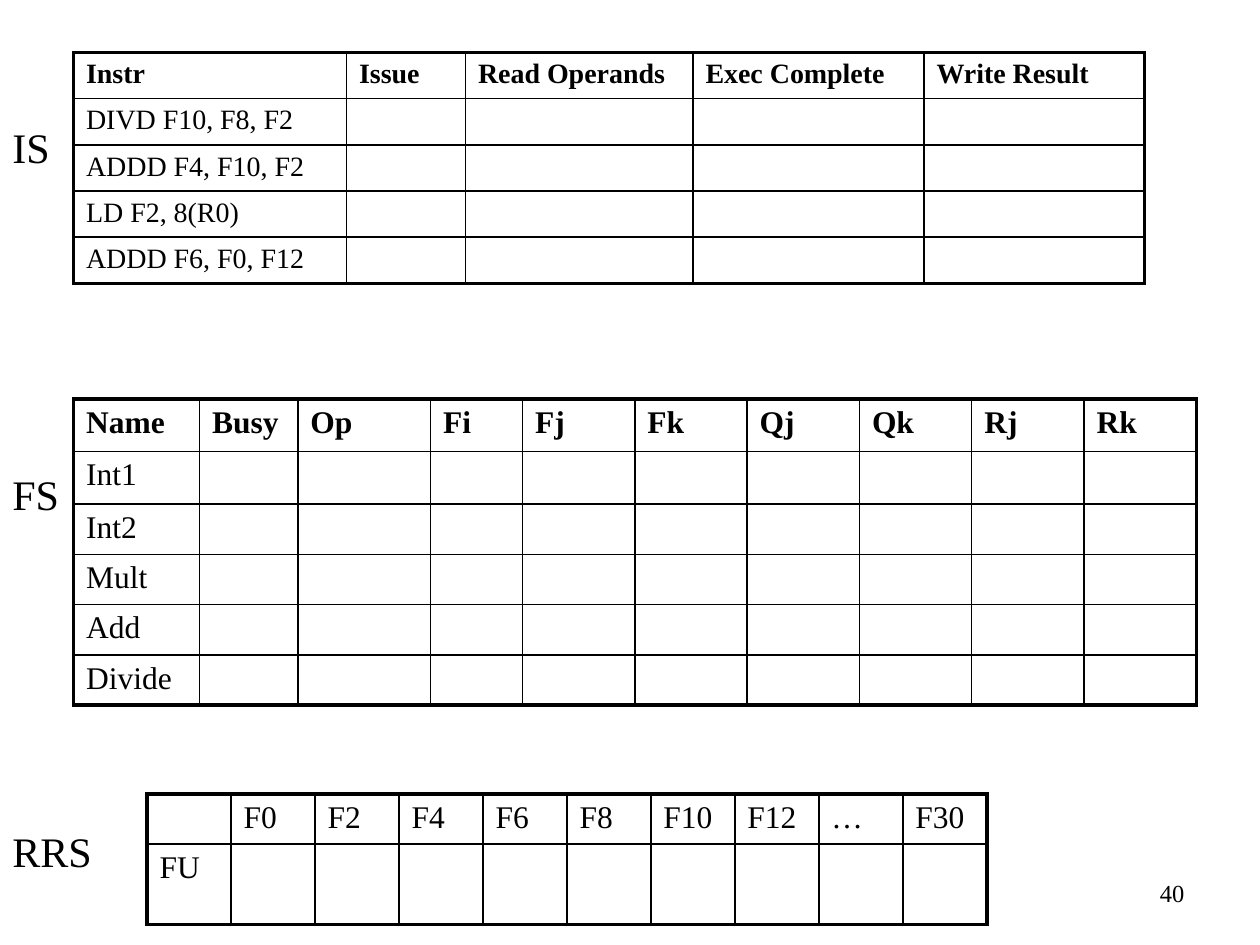
from lxml import etree
from pptx import Presentation
from pptx.dml.color import RGBColor
from pptx.enum.text import MSO_AUTO_SIZE, PP_ALIGN
from pptx.oxml.ns import qn
from pptx.util import Pt

LEFT, RIGHT = PP_ALIGN.LEFT, PP_ALIGN.RIGHT
FIT_SHAPE, NO_FIT = MSO_AUTO_SIZE.SHAPE_TO_FIT_TEXT, MSO_AUTO_SIZE.NONE
FONT = "Times New Roman"
BLACK = "000000"
OUTER_LINE, INNER_LINE = 2.25, 1
BLANK_LAYOUT = 6

TABLES = [
    {
        "position": (42, 30),
        "columns": [156, 68, 130, 132, 126],
        "rows": [26.4] * 5,
        "size": 16,
        "bold_header": True,
        "header": ["Instr", "Issue", "Read Operands", "Exec Complete", "Write Result"],
        "first_column": ["DIVD F10, F8, F2", "ADDD F4, F10, F2", "LD F2, 8(R0)", "ADDD F6, F0, F12"],
    },
    {
        "position": (42, 228),
        "columns": [72, 56.2, 75.8, 52.6] + [64.2] * 6,
        "rows": [30] * 2 + [28.75] * 4,
        "size": 18,
        "bold_header": True,
        "header": ["Name", "Busy", "Op", "Fi", "Fj", "Fk", "Qj", "Qk", "Rj", "Rk"],
        "first_column": ["Int1", "Int2", "Mult", "Add", "Divide"],
    },
    {
        "position": (84, 453.6),
        "columns": [48] * 10,
        "rows": [28.7, 46],
        "size": 18,
        "bold_header": False,
        "header": ["", "F0", "F2", "F4", "F6", "F8", "F10", "F12", "…", "F30"],
        "first_column": ["FU"],
    },
]

LABELS = [
    ("IS", (0, 66, 36, 36), 24, LEFT, False),
    ("FS", (0, 264, 41.2, 36), 24, LEFT, False),
    ("RRS", (0, 468, 60, 36), 24, LEFT, False),
    ("40", (534, 498, 150, 36), 14, RIGHT, True),
]


def color(value):
    return RGBColor.from_string(value)


def add_run(paragraph, text, size, bold=False):
    run = paragraph.add_run()
    run.text = text
    run.font.name = FONT
    run.font.size = Pt(size)
    run.font.bold = bold
    run.font.color.rgb = color(BLACK)


def set_borders(cell, widths):
    properties = cell._tc.get_or_add_tcPr()
    for index, (side, width) in enumerate(zip("LRTB", widths)):
        line = etree.Element(qn(f"a:ln{side}"), w=str(Pt(width)))
        fill = etree.SubElement(line, qn("a:solidFill"))
        etree.SubElement(fill, qn("a:srgbClr"), val=BLACK)
        properties.insert(index, line)


def fill_cell(cell, text, size, bold):
    cell.fill.background()
    paragraph = cell.text_frame.paragraphs[0]
    spacing = etree.SubElement(paragraph._p.get_or_add_pPr(), qn("a:spcBef"))
    etree.SubElement(spacing, qn("a:spcPct"), val="20000")
    if text:
        add_run(paragraph, text, size, bold)
    else:
        ending = etree.SubElement(paragraph._p, qn("a:endParaRPr"), sz=str(size * 100))
        etree.SubElement(ending, qn("a:latin"), typeface=FONT)


def add_status_table(slide, content):
    columns, rows = content["columns"], content["rows"]
    left, top = content["position"]
    table = slide.shapes.add_table(
        len(rows), len(columns), Pt(left), Pt(top), Pt(sum(columns)), Pt(sum(rows))
    ).table
    table.first_row = False
    table.horz_banding = False
    for column, width in zip(table.columns, columns):
        column.width = Pt(width)
    for row, height in zip(table.rows, rows):
        row.height = Pt(height)

    blanks = [""] * (len(columns) - 1)
    lines = [content["header"]] + [[name] + blanks for name in content["first_column"]]
    for row_index, line in enumerate(lines):
        for column_index, text in enumerate(line):
            cell = table.cell(row_index, column_index)
            bold = content["bold_header"] and row_index == 0
            fill_cell(cell, text, content["size"], bold)
            on_edge = (
                column_index == 0,
                column_index == len(columns) - 1,
                row_index == 0,
                row_index == len(rows) - 1,
            )
            set_borders(cell, [OUTER_LINE if edge else INNER_LINE for edge in on_edge])


def add_label(slide, text, box, size, alignment, wrap):
    shape = slide.shapes.add_textbox(*map(Pt, box))
    frame = shape.text_frame
    frame.word_wrap = wrap
    frame.auto_size = NO_FIT if wrap else FIT_SHAPE
    paragraph = frame.paragraphs[0]
    paragraph.alignment = alignment
    add_run(paragraph, text, size)


def main():
    presentation = Presentation()
    presentation.slide_width, presentation.slide_height = Pt(720), Pt(540)
    slide = presentation.slides.add_slide(presentation.slide_layouts[BLANK_LAYOUT])
    for content in TABLES:
        add_status_table(slide, content)
    for label in LABELS:
        add_label(slide, *label)
    presentation.save("out.pptx")


if __name__ == "__main__":
    main()
